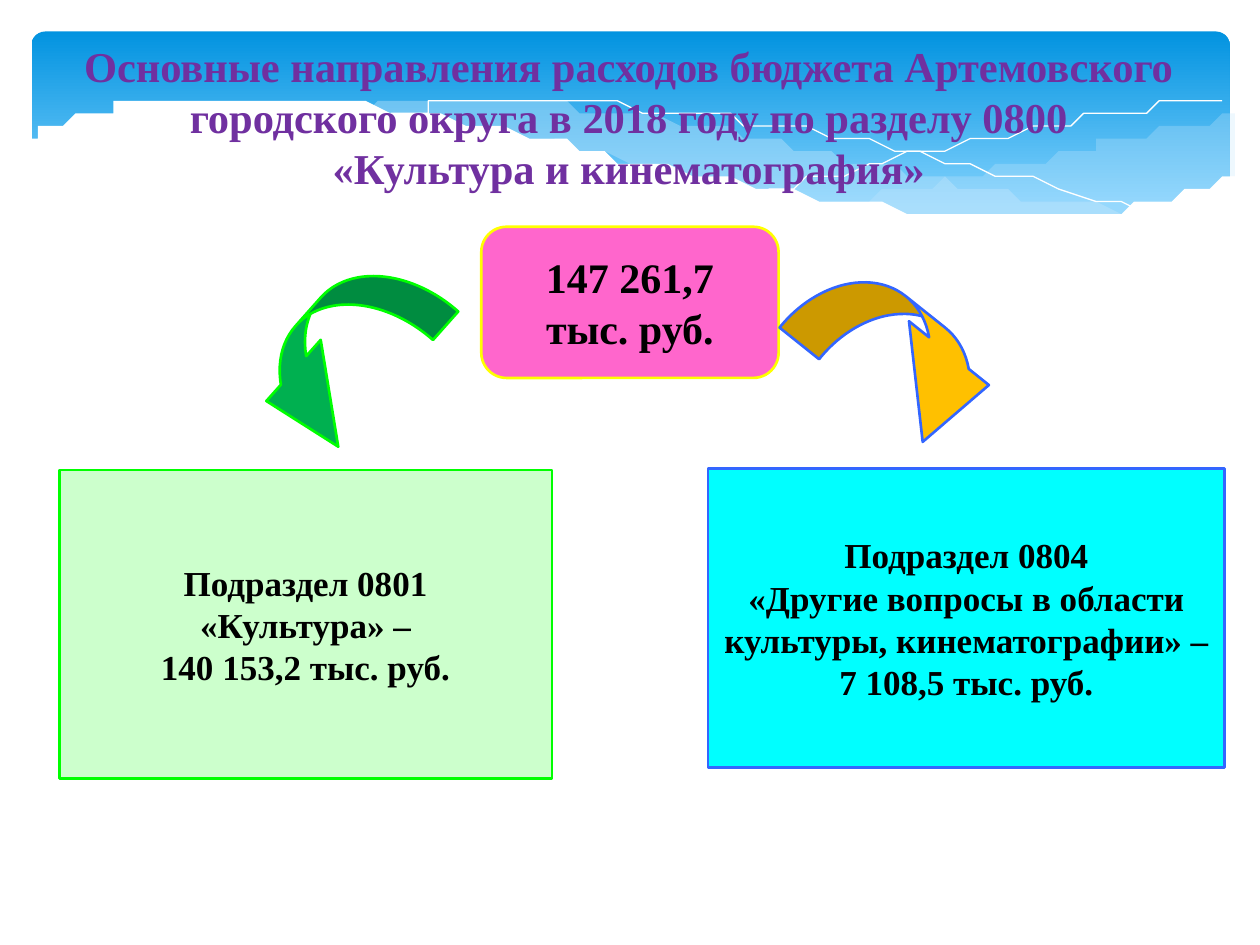
from dataclasses import dataclass
from typing import NamedTuple

import pptx
import pptx.dml.color
import pptx.enum.dml
import pptx.enum.shapes
import pptx.enum.text
import pptx.oxml.ns
import pptx.util
from lxml import etree

COLS, ROWS = 100, 75
CELL = pptx.util.Inches(10) // COLS
KIND = pptx.enum.shapes.MSO_SHAPE
ALIGN = pptx.enum.text.PP_ALIGN
ANCHOR = pptx.enum.text.MSO_ANCHOR

Points = list[tuple[float, float]]


@dataclass(frozen=True)
class Theme:
    font: str = "Times New Roman"
    head: float = 24.3
    total: float = 24
    body: float = 20
    edge: float = 1.5
    ink: str = "000000"
    title: str = "7030A0"
    white: str = "FFFFFF"
    sky: str = "0293E0"
    haze: str = "83D3FE"
    veil: str = "C6E7FC"
    pink: str = "FF66CC"
    yellow: str = "FFFF00"
    mint: str = "CCFFCC"
    lime: str = "00FF00"
    aqua: str = "00FFFF"
    blue: str = "3366FF"
    gold: str = "FFC000"
    green: str = "00B050"


THEME = Theme()


class Area(NamedTuple):
    col: float
    row: float
    wide: float
    high: float


class Box(NamedTuple):
    area: Area
    kind: int
    fill: str
    line: str
    size: float
    inset: tuple[float, float]
    lines: list[str]


class Arrow(NamedTuple):
    area: Area
    kind: int
    turn: float
    bends: list[float]
    fill: str
    line: str


class Wave(NamedTuple):
    edges: list[Points]
    fill: str | None
    alpha: int = 100


WAVES = [
    Wave([[(97.6, 9.4), (93.5, 10.1), (89.1, 11), (86.1, 11.8), (80.5, 13.1), (75.3, 14.3),
           (70.6, 15.2), (66.1, 16)],
          [(66.1, 16), (71.8, 16.7), (76.9, 17.1), (81.4, 17.2), (86.3, 17), (90.5, 16.3),
           (94.2, 15.4), (97.6, 14.1)]], THEME.veil, 29),
    Wave([[(89.3, 16.7), (83.7, 16), (77.5, 14.9), (70.6, 13.4), (62.9, 11.6), (56.9, 10.2),
           (51.4, 9.2), (46.5, 8.6), (42, 8.2), (36.1, 8), (32.8, 8.1), (28.6, 8.6)],
          [(28.6, 8.6), (34.2, 9.4), (40.4, 10.6), (44.9, 11.6), (53, 13.5), (60.1, 15),
           (66.5, 16.1), (72.2, 16.8), (77.3, 17.2), (81.8, 17.3), (85.7, 17.1),
           (89.3, 16.7)]], THEME.veil, 40),
    Wave([[(30.9, 9), (34.4, 8.4), (40.1, 8.1), (46.9, 8.3), (53.3, 8.8), (60.8, 9.8),
           (69.5, 11.4), (79.5, 13.6), (90.7, 16.6)]], None),
    Wave([[(61.3, 15.1), (67.2, 13.5), (74.8, 11.7), (83.6, 9.9), (89.5, 8.8), (93.8, 8.3),
           (97.5, 8)]], None),
    Wave([[(97.7, 14.1), (93, 15.7), (87.5, 16.7), (80.9, 17.1), (74.4, 16.8), (66.8, 16),
           (57.9, 14.4), (50.3, 12.8), (44.7, 11.4), (36.5, 9.6), (29.2, 8.5), (23, 7.9),
           (17.7, 7.8), (13.2, 8.1), (9.5, 8.5), (6.7, 9.1), (4.6, 9.8), (2.3, 10.7)],
          [(2.3, 22.4), (97.7, 22.4)]], THEME.white),
]

TITLE = ("Основные направления расходов бюджета Артемовского городского округа "
         "в 2018 году по разделу 0800\v«Культура и кинематография»")

BOXES = [
    Box(Area(38.2, 18, 23.6, 12), KIND.ROUNDED_RECTANGLE, THEME.pink, THEME.yellow,
        THEME.total, (0.14, 0.05), ["147 261,7", "тыс. руб."]),
    Box(Area(4.7, 37.3, 39.1, 24.5), KIND.RECTANGLE, THEME.mint, THEME.lime,
        THEME.body, (0.1, 0), ["Подраздел 0801", "«Культура» –", "140 153,2 тыс. руб."]),
    Box(Area(56.2, 37.2, 41, 23.7), KIND.RECTANGLE, THEME.aqua, THEME.blue,
        THEME.body, (0.1, 0),
        ["Подраздел 0804",
         "«Другие вопросы в области культуры, кинематографии» – 7 108,5 тыс. руб."]),
]

ARROWS = [
    Arrow(Area(62.4, 24.5, 18.6, 8.2), KIND.CURVED_DOWN_ARROW, 38.6,
          [0.49, 0.99, 0.83], THEME.gold, THEME.blue),
    Arrow(Area(18.4, 23.9, 17.6, 8.9), KIND.CURVED_UP_ARROW, 131.6,
          [0.34, 0.73, 0.75], THEME.green, THEME.lime),
]


def tint(code: str) -> pptx.dml.color.RGBColor:
    return pptx.dml.color.RGBColor.from_string(code)


def place(area: Area) -> list[int]:
    return [round(part * CELL) for part in area]


def paint(shape, fill: str | None, line: str | None, width: float = THEME.edge) -> None:
    shape.shadow.inherit = False
    if fill:
        shape.fill.solid()
        shape.fill.fore_color.rgb = tint(fill)
    else:
        shape.fill.background()
    if line:
        shape.line.color.rgb = tint(line)
        shape.line.width = pptx.util.Pt(width)
    else:
        shape.line.fill.background()


def write(shape, lines: list[str], size: float, color: str,
          inset: tuple[float, float]) -> None:
    side, edge = (pptx.util.Inches(gap) for gap in inset)
    frame = shape.text_frame
    form = {"word_wrap": True, "vertical_anchor": ANCHOR.MIDDLE, "margin_left": side,
            "margin_right": side, "margin_top": edge, "margin_bottom": edge}
    for name, value in form.items():
        setattr(frame, name, value)
    frame.text = "\n".join(lines)
    style = {"name": THEME.font, "size": pptx.util.Pt(size), "bold": True}
    for para in frame.paragraphs:
        para.alignment = ALIGN.CENTER
        for run in para.runs:
            for name, value in style.items():
                setattr(run.font, name, value)
            run.font.color.rgb = tint(color)


def smooth(knots: Points, steps: int = 5) -> Points:
    ends = [knots[0], *knots, knots[-1]]
    curve = [knots[0]]
    for a, b, c, d in zip(ends, ends[1:], ends[2:], ends[3:]):
        for step in range(1, steps + 1):
            t = step / steps
            curve.append(tuple(
                (2 * q + (r - p) * t + (2 * p - 5 * q + 4 * r - s) * t ** 2
                 + (3 * q - p - 3 * r + s) * t ** 3) / 2
                for p, q, r, s in zip(a, b, c, d)))
    return curve


def draw_wave(shapes, wave: Wave) -> None:
    start, *rest = [spot for edge in wave.edges for spot in smooth(edge)]
    pen = shapes.build_freeform(*start, scale=CELL)
    pen.add_line_segments(rest, close=wave.fill is not None)
    shape = pen.convert_to_shape()
    paint(shape, wave.fill, None if wave.fill else THEME.white, 0)
    if wave.alpha < 100:
        qn = pptx.oxml.ns.qn
        color = next(shape.fill._xPr.iter(qn("a:srgbClr")))
        etree.SubElement(color, qn("a:alpha"), val=str(wave.alpha * 1000))


def draw_sky(shapes) -> None:
    sky = shapes.add_shape(KIND.ROUNDED_RECTANGLE, *place(Area(2.5, 2.5, 95.1, 15.6)))
    sky.adjustments[0] = 0.07
    paint(sky, None, None)
    sky.fill.gradient()
    sky.fill.gradient_angle = 270
    tones = [(0, THEME.sky), (0.9, THEME.haze)]
    for stop, (spot, color) in zip(sky.fill.gradient_stops, tones):
        stop.position = spot
        stop.color.rgb = tint(color)


def draw_box(shapes, box: Box) -> None:
    shape = shapes.add_shape(box.kind, *place(box.area))
    paint(shape, box.fill, box.line)
    write(shape, box.lines, box.size, THEME.ink, box.inset)


def draw_arrow(shapes, arrow: Arrow) -> None:
    shape = shapes.add_shape(arrow.kind, *place(arrow.area))
    shape.rotation = arrow.turn
    for place_no, bend in enumerate(arrow.bends):
        shape.adjustments[place_no] = bend
    paint(shape, arrow.fill, arrow.line)


def main() -> None:
    deck = pptx.Presentation()
    deck.slide_width, deck.slide_height = COLS * CELL, ROWS * CELL
    shapes = deck.slides.add_slide(deck.slide_layouts[6]).shapes
    draw_sky(shapes)
    for wave in WAVES:
        draw_wave(shapes, wave)
    title = shapes.add_textbox(*place(Area(2.7, 2.3, 94.4, 13.9)))
    write(title, [TITLE], THEME.head, THEME.title, (0.1, 0.05))
    for box in BOXES:
        draw_box(shapes, box)
    for arrow in ARROWS:
        draw_arrow(shapes, arrow)
    deck.save("out.pptx")


if __name__ == "__main__":
    main()
